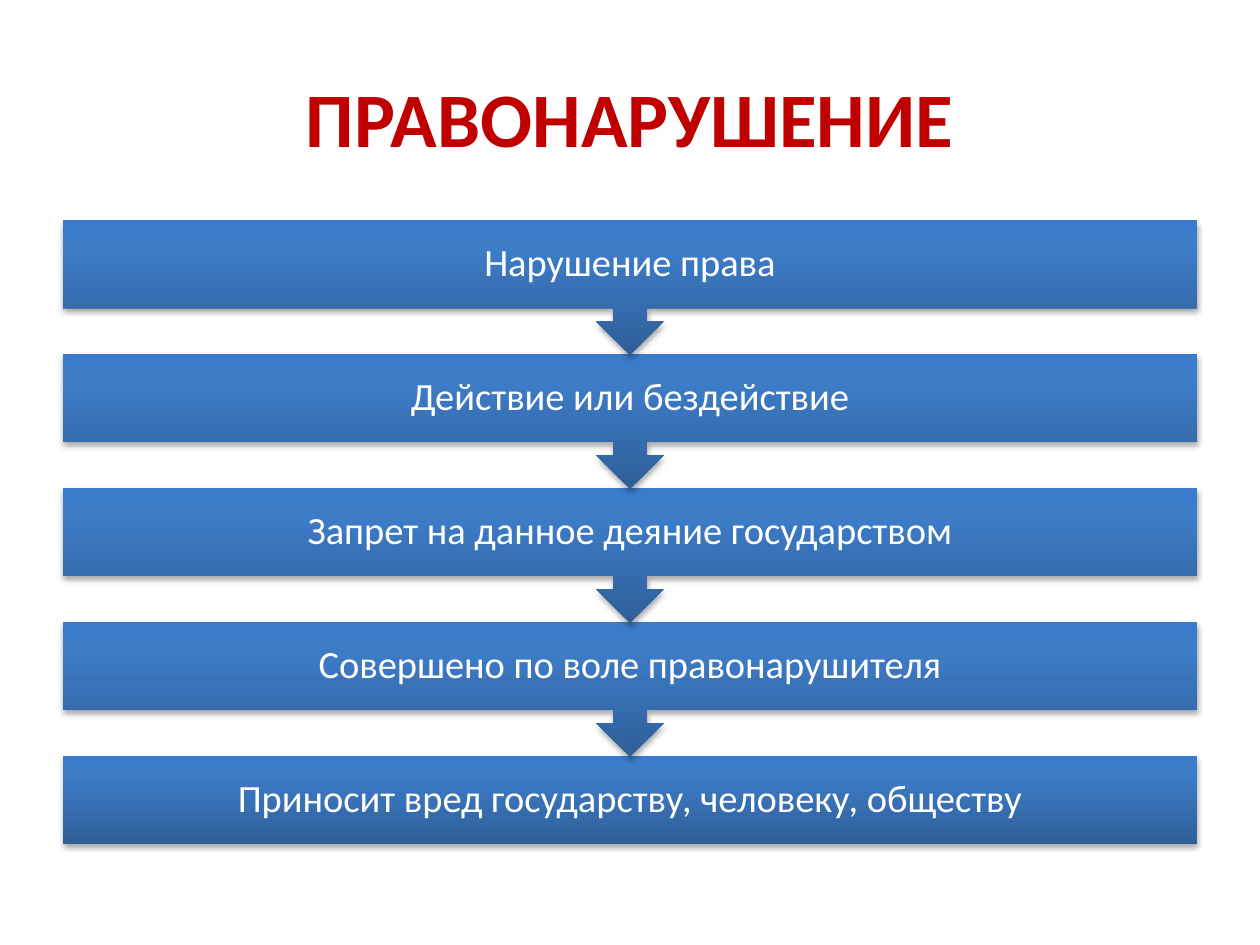
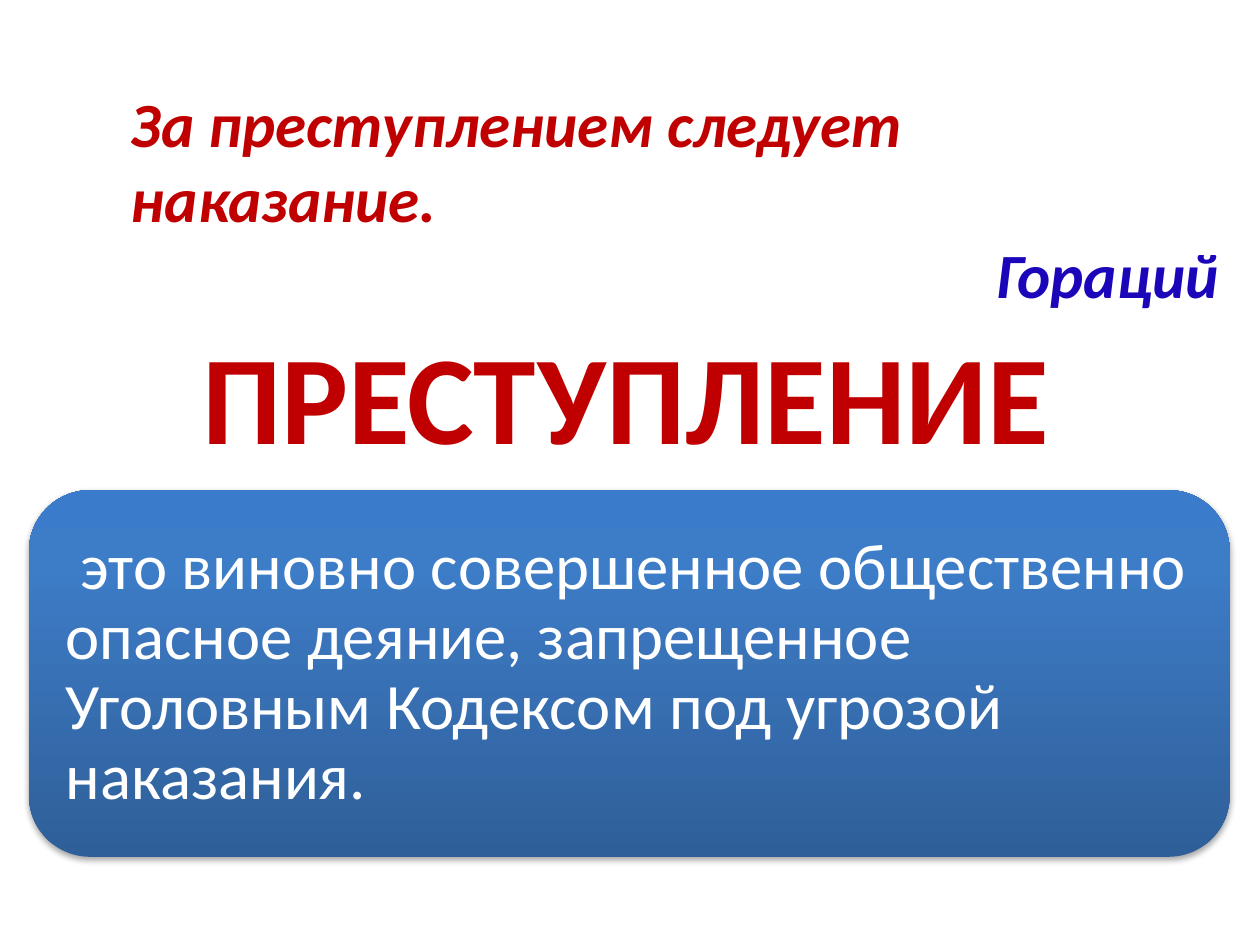
import pptx
import pptx.dml.color
import pptx.enum.shapes
import pptx.enum.text
import pptx.oxml
import pptx.oxml.ns
import pptx.util

Inches = pptx.util.Inches
RGBColor = pptx.dml.color.RGBColor
Shapes = pptx.enum.shapes.MSO_SHAPE
Align = pptx.enum.text.PP_ALIGN
Anchor = pptx.enum.text.MSO_ANCHOR
AutoSize = pptx.enum.text.MSO_AUTO_SIZE

FONT = "Calibri"
RED = RGBColor(0xC0, 0x00, 0x00)
VIOLET = RGBColor(0x1B, 0x06, 0xBA)
WHITE = RGBColor(0xFF, 0xFF, 0xFF)
# Panel gradient, from the bottom edge to the top edge
PANEL_STOPS = [
    (0, RGBColor(0x2F, 0x5F, 0x99)),
    (80, RGBColor(0x3D, 0x7C, 0xC7)),
    (100, RGBColor(0x3A, 0x7C, 0xCB)),
]

SIGNS = [
    "Нарушение права",
    "Действие или бездействие",
    "Запрет на данное деяние государством",
    "Совершено по воле правонарушителя",
    "Приносит вред государству, человеку, обществу",
]


def write(para, text, size, color, align=Align.LEFT, bold=False, italic=False,
          line_spacing=None, indent=0):
    """Put formatted text into a paragraph."""
    if indent:
        para._p.get_or_add_pPr().set("indent", str(Inches(indent)))
    para.alignment = align
    if line_spacing:
        para.line_spacing = line_spacing
    span = para.add_run()
    span.text = text
    span.font.name = FONT
    span.font.size = pptx.util.Pt(size)
    span.font.color.rgb = color
    span.font.bold = bold
    span.font.italic = italic


def add_page(deck, title, box, size):
    """Add a title-only page with its red heading."""
    page = deck.slides.add_slide(deck.slide_layouts[5])
    heading = page.shapes.title
    heading.left, heading.top, heading.width, heading.height = map(Inches, box)
    frame = heading.text_frame
    frame.auto_size = AutoSize.NONE
    frame.vertical_anchor = Anchor.MIDDLE
    write(frame.paragraphs[0], title, size, RED, align=Align.CENTER, bold=True)
    return page


def add_panel(page, kind, box, text, margin, **text_format):
    """Add a blue gradient shape with a soft shadow and white text."""
    panel = page.shapes.add_shape(kind, *map(Inches, box))
    namespace = pptx.oxml.ns.nsdecls("a")
    properties = panel._element.spPr
    stops = "".join(
        f'<a:gs pos="{place * 1000}"><a:srgbClr val="{color}"/></a:gs>'
        for place, color in PANEL_STOPS)
    properties.append(pptx.oxml.parse_xml(
        f'<a:gradFill {namespace}><a:gsLst>{stops}</a:gsLst>'
        '<a:lin ang="16200000" scaled="0"/></a:gradFill>'))
    panel.line.fill.background()
    properties.append(pptx.oxml.parse_xml(
        f'<a:effectLst {namespace}>'
        '<a:outerShdw blurRad="40000" dist="23000" dir="5400000" rotWithShape="0">'
        '<a:srgbClr val="000000"><a:alpha val="35000"/></a:srgbClr>'
        '</a:outerShdw></a:effectLst>'))

    frame = panel.text_frame
    frame.word_wrap = True
    frame.vertical_anchor = Anchor.MIDDLE
    frame.margin_left = frame.margin_right = Inches(margin)
    frame.margin_top = frame.margin_bottom = Inches(margin)
    write(frame.paragraphs[0], text, color=WHITE, line_spacing=0.9, **text_format)


def add_sign_chain(page, box, signs):
    """Stack the signs, each pointing down at the next one."""
    left, top, width, height = box
    bar_height = 0.7
    pitch = (height - bar_height) / (len(signs) - 1)
    # The lowest bar goes first, so that each arrow lies over the bar below
    for index in reversed(range(len(signs))):
        last = index == len(signs) - 1
        add_panel(page, Shapes.RECTANGLE if last else Shapes.DOWN_ARROW_CALLOUT,
                  (left, top + index * pitch, width, bar_height if last else 1.07),
                  signs[index], 0.17, size=22, align=Align.CENTER)


def add_epigraph(page, box, quote, author):
    """Add the quotation with its author at the right."""
    frame = page.shapes.add_textbox(*map(Inches, box)).text_frame
    frame.word_wrap = True
    frame.auto_size = AutoSize.SHAPE_TO_FIT_TEXT
    write(frame.paragraphs[0], quote, 36, RED, bold=True, italic=True)
    write(frame.add_paragraph(), author, 36, VIOLET, align=Align.RIGHT,
          bold=True, italic=True)


def build_offence(deck):
    page = add_page(deck, "ПРАВОНАРУШЕНИЕ", (0.5, 0.3, 9, 1.25), 44)
    add_sign_chain(page, (0.5, 1.75, 9, 4.95), SIGNS)


def build_crime(deck):
    page = add_page(deck, "ПРЕСТУПЛЕНИЕ", (0.47, 2.5, 9, 1.25), 72)
    # Definition
    add_panel(page, Shapes.ROUNDED_RECTANGLE, (0.23, 3.89, 9.53, 2.91),
              "это виновно совершенное общественно опасное деяние, запрещенное "
              "Уголовным Кодексом под угрозой наказания.",
              0.15, size=37, indent=0.12)
    add_epigraph(page, (0.94, 0.62, 8.83, 1.92),
                 "За преступлением следует наказание.", "Гораций")


def main():
    deck = pptx.Presentation()
    deck.slide_width, deck.slide_height = Inches(10), Inches(7.5)
    build_offence(deck)
    build_crime(deck)
    deck.save("out.pptx")


if __name__ == "__main__":
    main()
